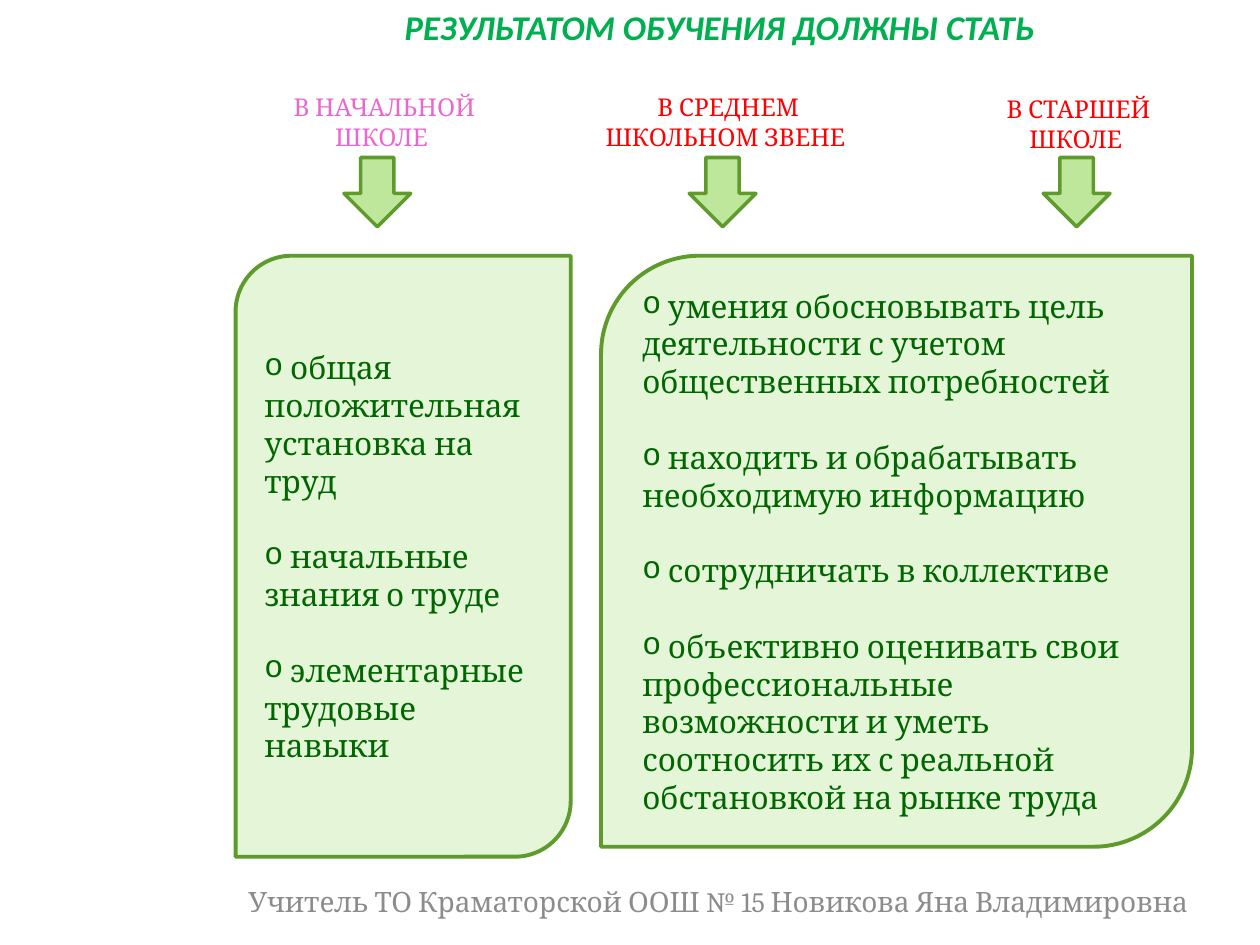
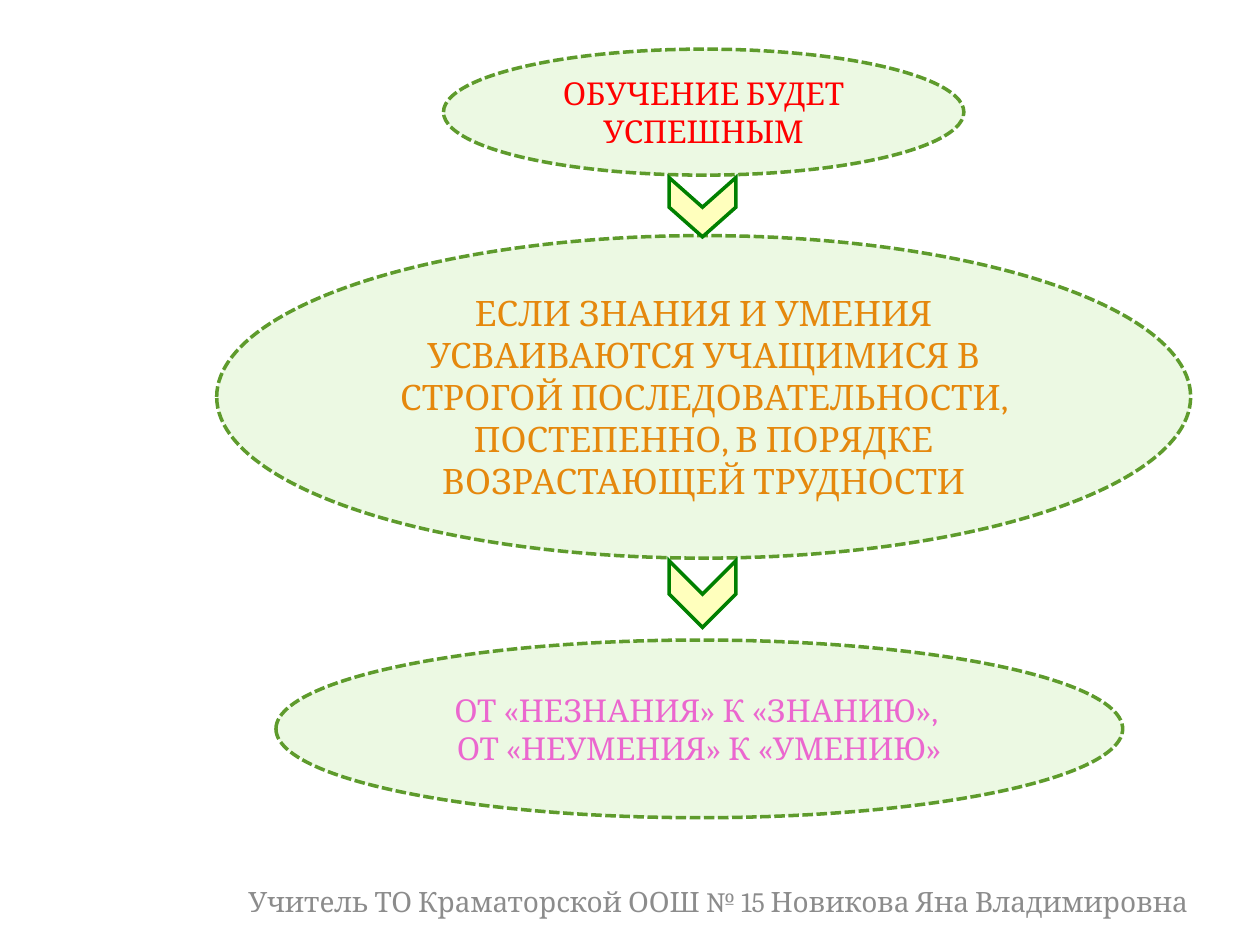
"""Build two slides on the results and the sequence of labour training."""
from dataclasses import dataclass

from lxml.etree import SubElement
from pptx import Presentation
from pptx.dml.color import RGBColor
from pptx.enum.dml import MSO_LINE
from pptx.enum.shapes import MSO_SHAPE
from pptx.enum.text import MSO_ANCHOR, MSO_AUTO_SIZE, PP_ALIGN
from pptx.oxml.ns import qn
from pptx.util import Inches, Pt

GREEN_LINE = "5E9B2C"
PANEL_FILL = "E5F6D8"
OVAL_FILL = "ECF9E3"
ARROW_FILL = "7FD13B"
CHEVRON_FILL = "FFFF00"
CHEVRON_LINE = "008000"
PANEL_TEXT = "006600"
TITLE_GREEN = "00B050"
PINK = "EB67CF"
RED = "FF0000"
ORANGE = "E5880D"
GREY = "8C8C8C"
BODY_FONT = "Cambria"
TITLE_FONT = "Calibri"
FOOTER = "Учитель ТО Краматорской ООШ № 15 Новикова Яна Владимировна"
ARROW_SIZE = 0.53
PANEL_GAP = 21.6


@dataclass(frozen=True)
class Box:
    """Place and size in inches."""
    left: float
    top: float
    width: float
    height: float

    def lengths(self):
        """Return the four values as lengths."""
        return [Inches(value) for value in (self.left, self.top, self.width, self.height)]


@dataclass(frozen=True)
class TextStyle:
    """Look of the text in one box."""
    size: float
    color: str
    anchor: MSO_ANCHOR = MSO_ANCHOR.MIDDLE
    align: PP_ALIGN = PP_ALIGN.CENTER
    font: str = BODY_FONT
    emphasis: bool = False
    bullet: str = ""
    gap: float = 0


@dataclass(frozen=True)
class Stage:
    """School stage heading with the left edge of its arrow."""
    text: str
    box: Box
    color: str
    arrow_left: float
    anchor: MSO_ANCHOR = MSO_ANCHOR.BOTTOM


@dataclass(frozen=True)
class Panel:
    """Rounded panel with a bulleted list."""
    box: Box
    items: tuple[str, ...]


@dataclass(frozen=True)
class Oval:
    """Dashed ellipse with centred text."""
    box: Box
    lines: tuple[str, ...]
    size: float
    color: str


STAGES = (
    Stage("В НАЧАЛЬНОЙ ШКОЛЕ ", Box(2.19, 0.7, 1.72, 0.55), PINK, 2.73),
    Stage("В СТАРШЕЙ ШКОЛЕ ", Box(7.66, 0.7, 1.8, 0.57), RED, 8.28, MSO_ANCHOR.TOP),
    Stage("В СРЕДНЕМ ШКОЛЬНОМ ЗВЕНЕ ", Box(4.61, 0.7, 2.34, 0.55), RED, 5.47),
)
PANELS = (
    Panel(Box(1.87, 2.03, 2.66, 4.77), (
        "общая положительная установка на труд",
        "начальные знания о труде",
        "элементарные трудовые навыки",
    )),
    Panel(Box(4.77, 2.03, 4.69, 4.69), (
        "умения обосновывать цель деятельности с учетом общественных потребностей",
        "находить и обрабатывать необходимую информацию",
        "сотрудничать в коллективе",
        "объективно оценивать свои профессиональные возможности и уметь "
        "соотносить их с реальной обстановкой на рынке труда",
    )),
)
OVALS = (
    Oval(Box(3.52, 0.39, 4.13, 1), ("ОБУЧЕНИЕ БУДЕТ УСПЕШНЫМ",), 18, RED),
    Oval(Box(1.72, 1.87, 7.73, 2.56), (
        "ЕСЛИ ЗНАНИЯ И УМЕНИЯ УСВАИВАЮТСЯ УЧАЩИМИСЯ В СТРОГОЙ "
        "ПОСЛЕДОВАТЕЛЬНОСТИ, ПОСТЕПЕННО, В ПОРЯДКЕ ВОЗРАСТАЮЩЕЙ ТРУДНОСТИ",
    ), 20, ORANGE),
    Oval(Box(2.19, 5.08, 6.72, 1.41), (
        "ОТ «НЕЗНАНИЯ» К «ЗНАНИЮ», ",
        "ОТ «НЕУМЕНИЯ» К «УМЕНИЮ»",
    ), 18, PINK),
)
CHEVRONS = (Box(5.34, 1.38, 0.47, 0.53), Box(5.31, 4.45, 0.53, 0.53))


def rgb(color: str) -> RGBColor:
    """Turn a hex string into a colour."""
    return RGBColor.from_string(color)


def write_text(shape, lines: tuple[str, ...], style: TextStyle) -> None:
    """Write one paragraph for each line."""
    frame = shape.text_frame
    frame.word_wrap = True
    frame.auto_size = MSO_AUTO_SIZE.NONE
    frame.vertical_anchor = style.anchor
    for index, line in enumerate(lines):
        paragraph = frame.add_paragraph() if index else frame.paragraphs[0]
        paragraph.alignment = style.align
        if index:
            paragraph.space_before = Pt(style.gap)
        if style.bullet:
            properties = paragraph._p.get_or_add_pPr()
            SubElement(properties, qn("a:buFont"), typeface="Courier New")
            SubElement(properties, qn("a:buChar"), char=style.bullet)
            line = f" {line}"
        run = paragraph.add_run()
        run.text = line
        font = run.font
        font.name = style.font
        font.size = Pt(style.size)
        font.bold = font.italic = style.emphasis
        font.color.rgb = rgb(style.color)


def add_text(slide, box: Box, text: str, style: TextStyle) -> None:
    """Add a text box with one paragraph."""
    write_text(slide.shapes.add_textbox(*box.lengths()), (text,), style)


def add_figure(slide, kind: MSO_SHAPE, box: Box, fill: str, line: str = GREEN_LINE,
               width: float = 2, opacity: int = 100):
    """Add a filled and outlined preset shape."""
    shape = slide.shapes.add_shape(kind, *box.lengths())
    shape.shadow.inherit = False
    shape.fill.solid()
    shape.fill.fore_color.rgb = rgb(fill)
    if opacity < 100:
        color = shape._element.spPr.find(qn("a:solidFill"))[0]
        SubElement(color, qn("a:alpha"), val=str(opacity * 1000))
    shape.line.color.rgb = rgb(line)
    shape.line.width = Pt(width)
    return shape


def add_footer(slide) -> None:
    """Add the teacher's line at the bottom."""
    add_text(slide, Box(1.72, 6.95, 7.97, 0.4), FOOTER, TextStyle(16, GREY))


def build_results(presentation) -> None:
    """Build the slide with the results for each school stage."""
    slide = presentation.slides.add_slide(presentation.slide_layouts[5])
    title = slide.shapes.title
    title.left, title.top, title.width, title.height = Box(1.48, 0, 8.52, 0.39).lengths()
    write_text(title, ("РЕЗУЛЬТАТОМ ОБУЧЕНИЯ ДОЛЖНЫ СТАТЬ ",),
               TextStyle(19.8, TITLE_GREEN, MSO_ANCHOR.TOP, font=TITLE_FONT, emphasis=True))
    add_footer(slide)
    for stage in STAGES:
        add_text(slide, stage.box, stage.text, TextStyle(14, stage.color, stage.anchor))
        add_figure(slide, MSO_SHAPE.DOWN_ARROW,
                   Box(stage.arrow_left, 1.25, ARROW_SIZE, 0.55), ARROW_FILL, opacity=50)
    list_style = TextStyle(18, PANEL_TEXT, align=PP_ALIGN.LEFT, bullet="o", gap=PANEL_GAP)
    for panel in PANELS:
        shape = add_figure(slide, MSO_SHAPE.ROUND_2_DIAG_RECTANGLE, panel.box,
                           PANEL_FILL, width=2.25)
        write_text(shape, panel.items, list_style)


def build_sequence(presentation) -> None:
    """Build the slide with the condition of successful training."""
    slide = presentation.slides.add_slide(presentation.slide_layouts[6])
    add_footer(slide)
    for oval in OVALS:
        shape = add_figure(slide, MSO_SHAPE.OVAL, oval.box, OVAL_FILL)
        shape.line.dash_style = MSO_LINE.SQUARE_DOT
        write_text(shape, oval.lines, TextStyle(oval.size, oval.color))
    for box in CHEVRONS:
        chevron = add_figure(slide, MSO_SHAPE.CHEVRON, box, CHEVRON_FILL,
                             CHEVRON_LINE, opacity=26)
        chevron.rotation = 90
        SubElement(chevron._element.spPr.find(qn("a:ln")), qn("a:miter"), lim="800000")


def main() -> None:
    """Build and save the presentation."""
    presentation = Presentation()
    presentation.slide_width = Inches(10)
    presentation.slide_height = Inches(7.5)
    build_results(presentation)
    build_sequence(presentation)
    presentation.save("out.pptx")


if __name__ == "__main__":
    main()
